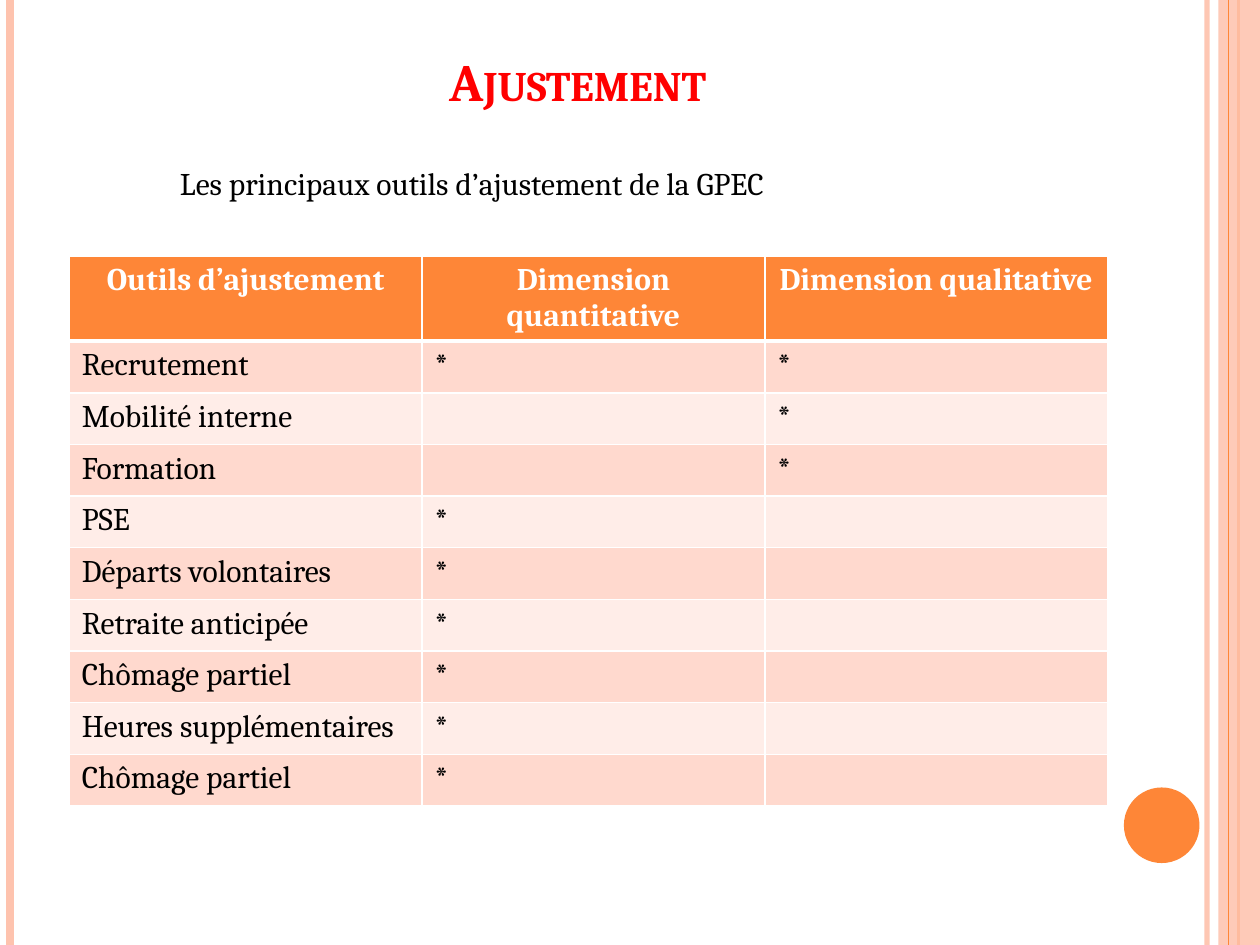
"""Build the slide on the main adjustment tools of workforce planning."""
from lxml.etree import SubElement
from pptx import Presentation
from pptx.dml.color import RGBColor
from pptx.enum.shapes import MSO_CONNECTOR as CONN, MSO_SHAPE as SHAPE
from pptx.enum.text import MSO_ANCHOR as ANCHOR, PP_ALIGN as ALIGN
from pptx.oxml.ns import qn
from pptx.util import Inches, Pt

ORANGE = RGBColor(0xFE, 0x86, 0x37)
PEACH = RGBColor(0xFE, 0xC3, 0xAE)
BANDS = RGBColor(0xFF, 0xD9, 0xCE), RGBColor(0xFF, 0xED, 0xE8)
RED = RGBColor(0xFF, 0, 0)
WHITE = RGBColor(0xFF, 0xFF, 0xFF)
BLACK = RGBColor(0, 0, 0)

TITLE = "Ajustement"
SUBTITLE = "Les principaux outils d’ajustement de la GPEC"
HEADERS = ["Outils d’ajustement", "Dimension quantitative", "Dimension qualitative"]
TOOLS = [
    ("Recrutement", "*", "*"),
    ("Mobilité interne", "", "*"),
    ("Formation", "", "*"),
    ("PSE", "*", ""),
    ("Départs volontaires", "*", ""),
    ("Retraite anticipée", "*", ""),
    ("Chômage partiel", "*", ""),
    ("Heures supplémentaires", "*", ""),
    ("Chômage partiel", "*", ""),
]
COL_WIDTHS = 2.8, 2.72, 2.72
HEADER_HEIGHT, ROW_HEIGHT = 0.66, 0.41
STRIPES = [(9.58, PEACH, 3, 93), (0.08, PEACH, 4.5, 100), (9.83, ORANGE, 1.5, 100)]
INNER_STRIPE = 9.75, ORANGE, 0.75, 100

TITLE_FONT = dict(name="Cambria", size=Pt(30), bold=True)
HEADER_FONT = dict(name="Cambria", size=Pt(18), bold=True)
BODY_FONT = dict(name="Cambria", size=Pt(18), bold=False)


def box(left, top, width, height):
    return [Inches(v) for v in (left, top, width, height)]


def write(tf, text, font, color, align=ALIGN.LEFT):
    p = tf.paragraphs[0]
    p.alignment = align
    r = p.add_run()
    r.text = text
    for key, value in font.items():
        setattr(r.font, key, value)
    r.font.color.rgb = color
    return r


def set_alpha(s, percent):
    for clr in s._element.spPr.iter(qn("a:srgbClr")):
        SubElement(clr, qn("a:alpha"), val=str(percent * 1000))


def add_stripe(shapes, x, color, width, alpha):
    s = shapes.add_connector(CONN.STRAIGHT, Inches(x), 0, Inches(x), Inches(7.5))
    s.line.color.rgb = color
    s.line.width = Pt(width)
    if alpha < 100:
        set_alpha(s, alpha)
    SubElement(s._element.spPr, qn("a:effectLst"))


def add_filled(shapes, kind, color, *place):
    s = shapes.add_shape(kind, *box(*place))
    s.shadow.inherit = False
    s.fill.solid()
    s.fill.fore_color.rgb = color
    s.line.fill.background()
    return s


def set_borders(cell, bottom, top):
    tcPr = cell._tc.get_or_add_tcPr()
    for i, (side, width) in enumerate(dict(lnL=1, lnR=1, lnT=top, lnB=bottom).items()):
        ln = tcPr.makeelement(qn(f"a:{side}"), w=str(Pt(width)))
        fill = SubElement(ln, qn("a:solidFill"))
        SubElement(fill, qn("a:srgbClr"), val=str(WHITE))
        tcPr.insert(i, ln)


def add_tools_table(shapes):
    height = HEADER_HEIGHT + ROW_HEIGHT * len(TOOLS)
    place = box(0.55, 2.03, sum(COL_WIDTHS), height)
    table = shapes.add_table(len(TOOLS) + 1, len(HEADERS), *place).table
    for col, width in zip(table.columns, COL_WIDTHS):
        col.width = Inches(width)
    for i, texts in enumerate([HEADERS, *TOOLS]):
        head = i == 0
        table.rows[i].height = Inches(HEADER_HEIGHT if head else ROW_HEIGHT)
        for j, text in enumerate(texts):
            cell = table.cell(i, j)
            cell.fill.solid()
            cell.fill.fore_color.rgb = ORANGE if head else BANDS[(i - 1) % 2]
            set_borders(cell, bottom=3 if head else 1, top=3 if i == 1 else 1)
            if head:
                write(cell.text_frame, text, HEADER_FONT, WHITE, ALIGN.CENTER)
            elif text:
                write(cell.text_frame, text, BODY_FONT, BLACK)


def main():
    prs = Presentation()
    prs.slide_width, prs.slide_height = Inches(10), Inches(7.5)
    shapes = prs.slides.add_slide(prs.slide_layouts[5]).shapes

    for stripe in STRIPES:
        add_stripe(shapes, *stripe)
    set_alpha(add_filled(shapes, SHAPE.RECTANGLE, PEACH, 9.67, 0, 0.33, 7.5), 87)
    add_stripe(shapes, *INNER_STRIPE)
    add_filled(shapes, SHAPE.OVAL, ORANGE, 8.92, 6.25, 0.6, 0.6)

    title = shapes.title
    title.left, title.top, title.width, title.height = box(0.5, 0.3, 8.17, 0.64)
    title.text_frame.vertical_anchor = ANCHOR.BOTTOM
    r = write(title.text_frame, TITLE, TITLE_FONT, RED, ALIGN.CENTER)
    r.font._element.set("cap", "small")

    add_tools_table(shapes)
    tf = shapes.add_textbox(*box(1.33, 1.25, 6.72, 0.4)).text_frame
    tf.word_wrap = True
    write(tf, SUBTITLE, BODY_FONT, BLACK)
    prs.save("out.pptx")


if __name__ == "__main__":
    main()
